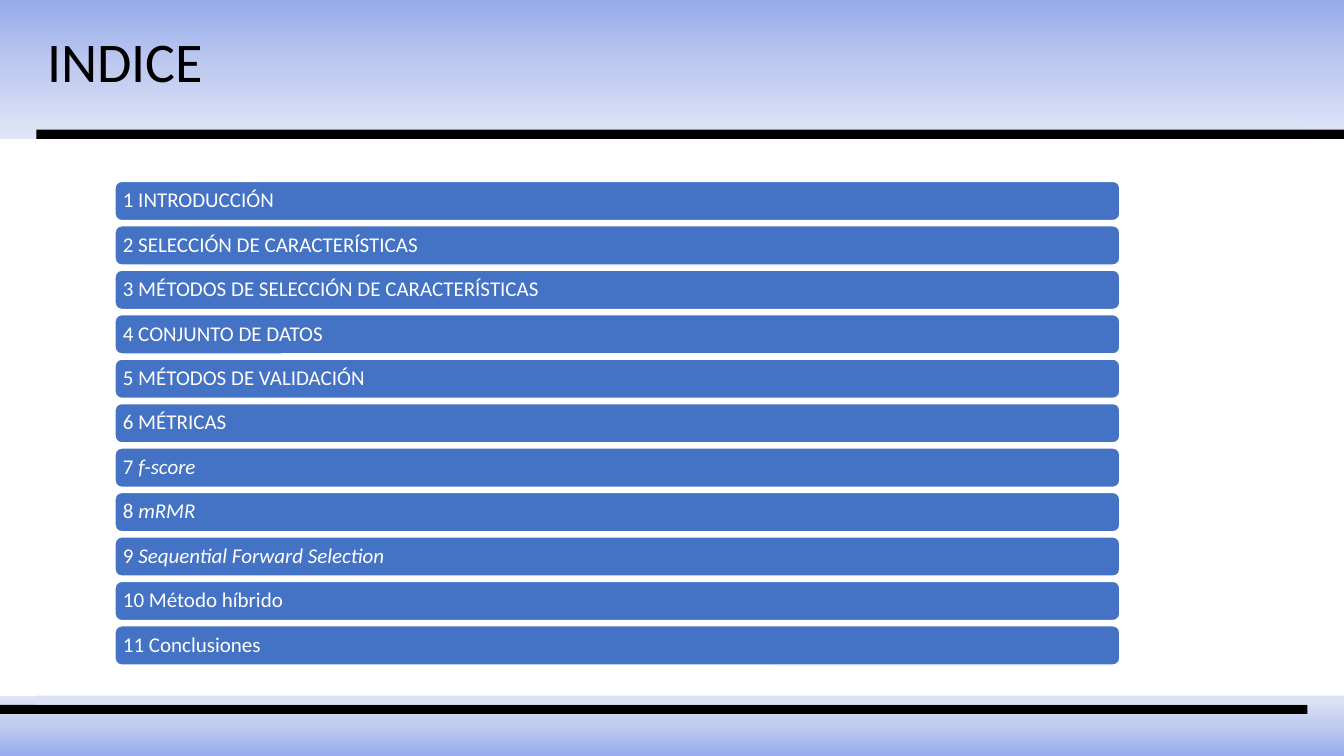
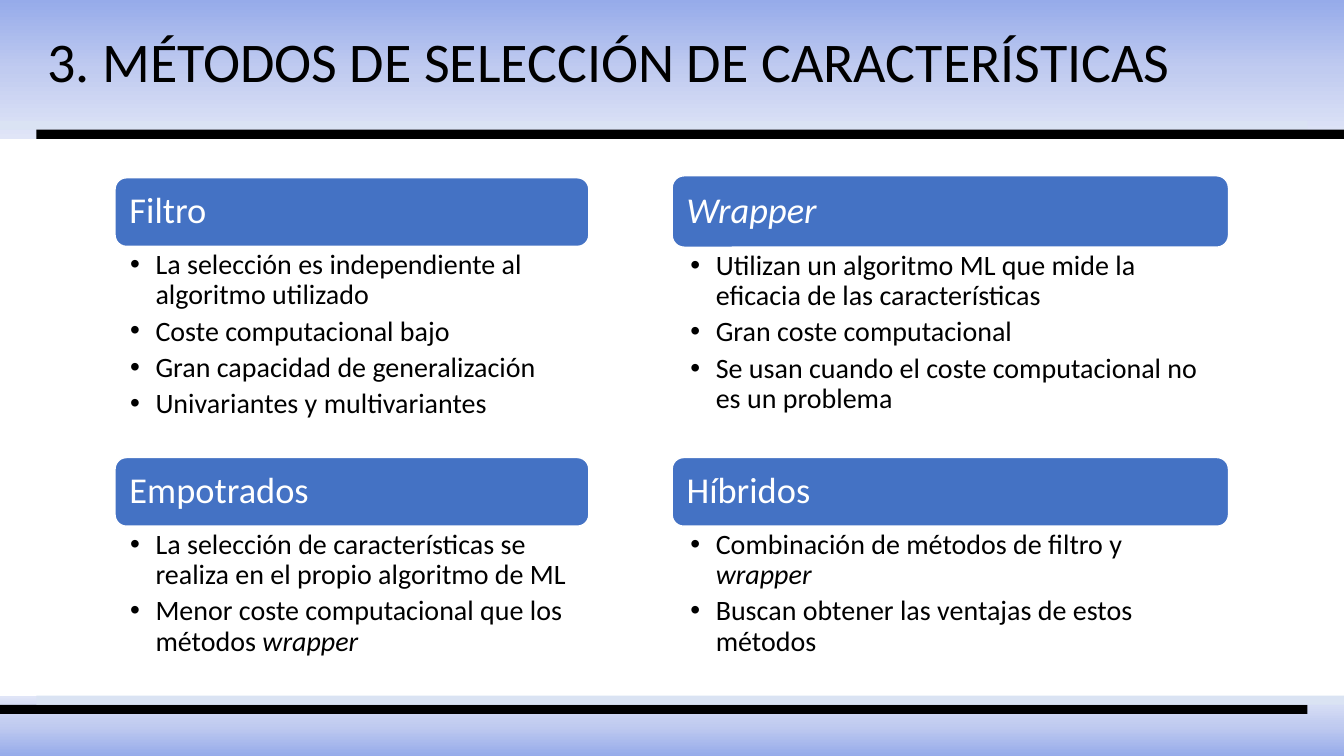
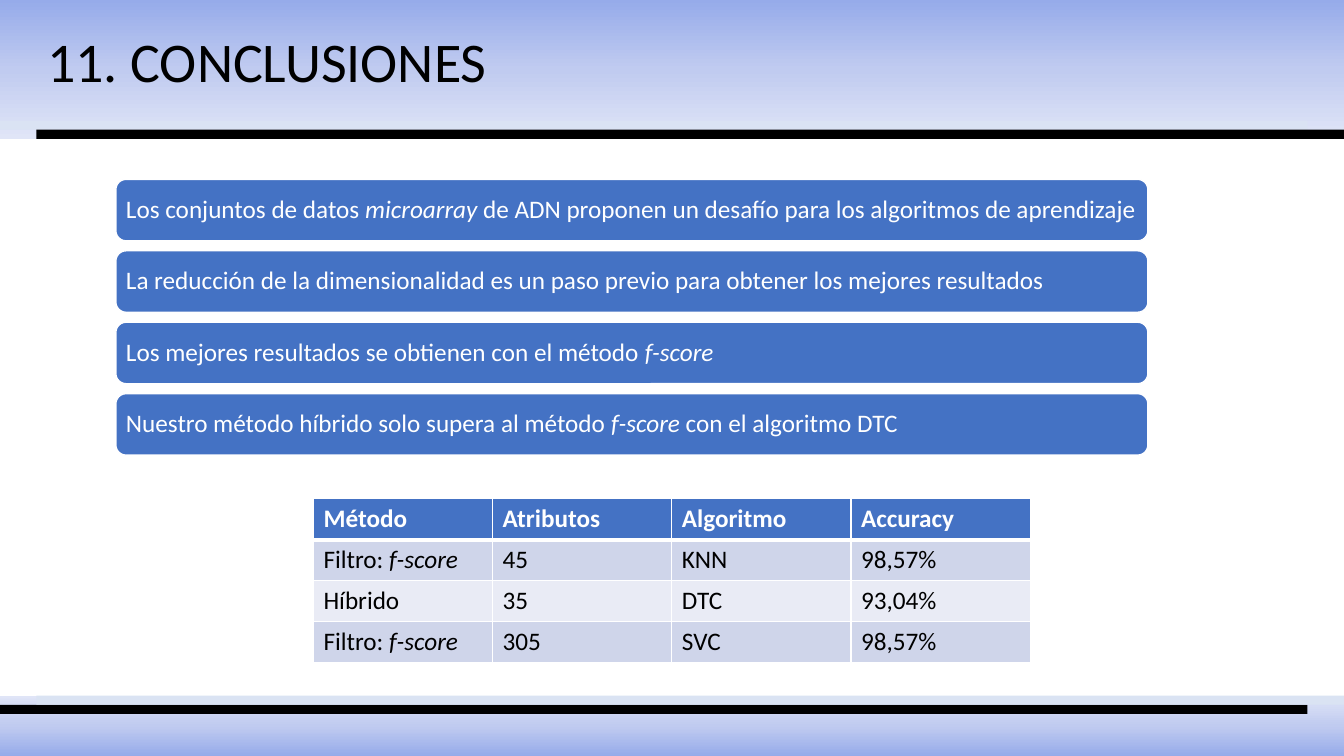
import copy

from lxml import etree
from pptx import Presentation
from pptx.dml.color import RGBColor
from pptx.enum import shapes, text
from pptx.oxml import ns
from pptx.util import Cm, Pt

FONT = "Calibri"
BLACK = RGBColor(0x00, 0x00, 0x00)
WHITE = RGBColor(0xFF, 0xFF, 0xFF)
BLUE = RGBColor(0x44, 0x72, 0xC4)
PALE_BLUE = RGBColor(0xDA, 0xE3, 0xF3)
ROW_ODD = RGBColor(0xCF, 0xD5, 0xEA)
ROW_EVEN = RGBColor(0xE9, 0xEB, 0xF5)
GRADIENT = [(0, RGBColor(0x96, 0xAB, 0xEA)),
            (0.5, RGBColor(0xC0, 0xCB, 0xF0)),
            (1, RGBColor(0xE0, 0xE5, 0xF7))]

SLIDE_W, SLIDE_H = 33.87, 19.05
HEADER_H, FOOTER_H = 3.5, 1.52
STRIP_H, STRIP_OFFSET = 0.23, 0.92

# Boxes are (left, top, width, height) in centimetres.
INDEX_BOX = (2.9, 4.57, 25.32, 12.19)
INDEX = ["1 INTRODUCCIÓN", "2 SELECCIÓN DE CARACTERÍSTICAS",
         "3 MÉTODOS DE SELECCIÓN DE CARACTERÍSTICAS", "4 CONJUNTO DE DATOS",
         "5 MÉTODOS DE VALIDACIÓN", "6 MÉTRICAS", "7 *f-score*", "8 *mRMR*",
         "9 *Sequential Forward Selection*", "10 Método híbrido",
         "11 Conclusiones"]

# Each card: box, heading height, heading, bullets.
METHODS = [
    ((2.9, 4.48, 11.94, 6.35), 1.73, "Filtro",
     ["La selección es independiente al algoritmo utilizado",
      "Coste computacional bajo",
      "Gran capacidad de generalización",
      "Univariantes y multivariantes"]),
    ((2.9, 11.53, 11.94, 5.23), 1.73, "Empotrados",
     ["La selección de características se realiza en el propio algoritmo de ML",
      "Menor coste computacional que los métodos *wrapper*"]),
    ((16.94, 4.43, 14.02, 6.2), 1.8, "*Wrapper*",
     ["Utilizan un algoritmo ML que mide la eficacia de las características",
      "Gran coste computacional",
      "Se usan cuando el coste computacional no es un problema"]),
    ((16.94, 11.53, 14.02, 5.23), 1.73, "Híbridos",
     ["Combinación de métodos de filtro y *wrapper*",
      "Buscan obtener las ventajas de estos métodos"]),
]

CONCLUSIONS_BOX = (2.92, 4.52, 26.01, 6.95)
CONCLUSIONS = [
    "Los conjuntos de datos *microarray* de ADN proponen un desafío para los "
    "algoritmos de aprendizaje",
    "La reducción de la dimensionalidad es un paso previo para obtener los "
    "mejores resultados",
    "Los mejores resultados se obtienen con el método *f-score*",
    "Nuestro método híbrido solo supera al método *f-score* con el algoritmo DTC",
]

RESULTS_BOX = (7.9, 12.57, 18.06, 4.12)
RESULTS = [["Método", "Atributos", "Algoritmo", "Accuracy"],
           ["Filtro: *f-score*", "45", "KNN", "98,57%"],
           ["Híbrido", "35", "DTC", "93,04%"],
           ["Filtro: *f-score*", "305", "SVC", "98,57%"]]


def to_cm(box):
    return [Cm(length) for length in box]


def write(paragraph, marked, size, color, bold=False):
    """Add the text run by run; words between asterisks are italic."""
    for order, piece in enumerate(marked.split("*")):
        if piece:
            run = paragraph.add_run()
            run.text = piece
            run.font.name = FONT
            run.font.size = Pt(size)
            run.font.color.rgb = color
            run.font.bold = bold
            run.font.italic = order % 2 == 1


def set_margins(frame, left, top, right, bottom):
    frame.margin_left, frame.margin_top = Cm(left), Cm(top)
    frame.margin_right, frame.margin_bottom = Cm(right), Cm(bottom)


# Shared frame: gradient bands and strips, kept on the layout
def add_rect(slide, box, color=None):
    rect = slide.shapes.add_shape(shapes.MSO_SHAPE.RECTANGLE, *to_cm(box))
    rect.shadow.inherit = False
    rect.line.fill.background()
    if color is not None:
        rect.fill.solid()
        rect.fill.fore_color.rgb = color
    return rect


def add_gradient_band(slide, box):
    band = add_rect(slide, box)
    band.fill.gradient()
    band.fill.gradient_angle = 270
    stop_list = next(band.element.iter(ns.qn("a:gsLst")))
    stop_list.insert(1, copy.deepcopy(stop_list[0]))
    for stop, (position, color) in zip(band.fill.gradient_stops, GRADIENT):
        stop.position = position
        stop.color.rgb = color
    return band


def build_frame(slide, layout):
    for placeholder in list(layout.placeholders):
        layout.shapes.element.remove(placeholder.element)
    footer_top = SLIDE_H - FOOTER_H
    strip_w = SLIDE_W - STRIP_OFFSET
    add_gradient_band(slide, (0, 0, SLIDE_W, HEADER_H))
    add_gradient_band(slide, (0, footer_top, SLIDE_W, FOOTER_H)).rotation = 180
    strips = [(0, HEADER_H - 2 * STRIP_H, PALE_BLUE),
              (STRIP_OFFSET, HEADER_H - STRIP_H, BLACK),
              (0, footer_top + STRIP_H, BLACK),
              (STRIP_OFFSET, footer_top, PALE_BLUE)]
    for left, top, color in strips:
        add_rect(slide, (left, top, strip_w, STRIP_H), color)
    for part in list(slide.shapes):
        layout.shapes.element.append(part.element)


def add_title(slide, title):
    frame = slide.shapes.add_textbox(*to_cm((0.94, 0.55, 30.02, 1.96))).text_frame
    frame.word_wrap = True
    frame.auto_size = text.MSO_AUTO_SIZE.SHAPE_TO_FIT_TEXT
    write(frame.paragraphs[0], title, 40, BLACK)


# Rounded bars
def add_bar(slide, box, label, size, inset):
    bar = slide.shapes.add_shape(shapes.MSO_SHAPE.ROUNDED_RECTANGLE, *to_cm(box))
    bar.shadow.inherit = False
    bar.fill.solid()
    bar.fill.fore_color.rgb = BLUE
    bar.line.color.rgb = WHITE
    bar.line.width = Pt(1)
    frame = bar.text_frame
    frame.word_wrap = True
    frame.vertical_anchor = text.MSO_ANCHOR.MIDDLE
    set_margins(frame, inset, inset, 0, inset)
    paragraph = frame.paragraphs[0]
    paragraph.alignment = text.PP_ALIGN.LEFT
    paragraph.line_spacing = 0.9
    write(paragraph, label, size, WHITE)


def add_bar_list(slide, box, labels, bar_h, size, inset):
    left, top, width, height = box
    pitch = (height - bar_h) / (len(labels) - 1)
    for order, label in enumerate(labels):
        add_bar(slide, (left, top + order * pitch, width, bar_h),
                label, size, inset)


# Card: heading bar with bullets below
def add_bullet(paragraph):
    properties = paragraph._p.get_or_add_pPr()
    properties.set("marL", str(Cm(0.64)))
    properties.set("indent", str(-Cm(0.64)))
    etree.SubElement(properties, ns.qn("a:buFont"), typeface="Arial")
    etree.SubElement(properties, ns.qn("a:buChar"), char="•")


def add_method_card(slide, box, heading_h, heading, points):
    left, top, width, height = box
    add_bar(slide, (left, top, width, heading_h), heading, 26, 0.28)
    body_box = (left, top + heading_h, width, height - heading_h)
    frame = slide.shapes.add_textbox(*to_cm(body_box)).text_frame
    frame.word_wrap = True
    set_margins(frame, 0.38 if width < 13 else 0.46, 0.1, 0.41, 0.1)
    for order, point in enumerate(points):
        paragraph = frame.add_paragraph() if order else frame.paragraphs[0]
        paragraph.line_spacing = 0.9
        paragraph.space_after = Pt(4.3)
        add_bullet(paragraph)
        write(paragraph, point, 20, BLACK)


# Results table
def add_borders(cell, widths):
    properties = cell._tc.get_or_add_tcPr()
    for order, (side, width) in enumerate(widths.items()):
        line = etree.Element(ns.qn(f"a:ln{side}"), w=str(Pt(width)))
        fill = etree.SubElement(line, ns.qn("a:solidFill"))
        etree.SubElement(fill, ns.qn("a:srgbClr"), val=str(WHITE))
        properties.insert(order, line)


def add_results(slide, box, rows):
    table = slide.shapes.add_table(len(rows), len(rows[0]), *to_cm(box)).table
    for r, row in enumerate(rows):
        header = r == 0
        for c, value in enumerate(row):
            cell = table.cell(r, c)
            cell.fill.solid()
            cell.fill.fore_color.rgb = (
                BLUE if header else ROW_ODD if r % 2 else ROW_EVEN)
            add_borders(cell, {"L": 1, "R": 1, "T": 3 if r == 1 else 1,
                               "B": 3 if header else 1})
            write(cell.text_frame.paragraphs[0], value, 18,
                  WHITE if header else BLACK, header)


# Slides
def build_index(slide):
    add_title(slide, "INDICE")
    add_bar_list(slide, INDEX_BOX, INDEX, 0.99, 15, 0.15)


def build_methods(slide):
    add_title(slide, "3. MÉTODOS DE SELECCIÓN DE CARACTERÍSTICAS")
    for card in METHODS:
        add_method_card(slide, *card)


def build_conclusions(slide):
    add_title(slide, "11. CONCLUSIONES")
    add_results(slide, RESULTS_BOX, RESULTS)
    add_bar_list(slide, CONCLUSIONS_BOX, CONCLUSIONS, 1.55, 18, 0.18)


def main():
    prs = Presentation()
    prs.slide_width, prs.slide_height = Cm(SLIDE_W), Cm(SLIDE_H)
    blank = prs.slide_layouts[6]
    builders = [build_index, build_methods, build_conclusions]
    slides = [prs.slides.add_slide(blank) for _ in builders]
    build_frame(slides[0], blank)
    for build, slide in zip(builders, slides):
        build(slide)
    prs.save("out.pptx")


if __name__ == "__main__":
    main()
